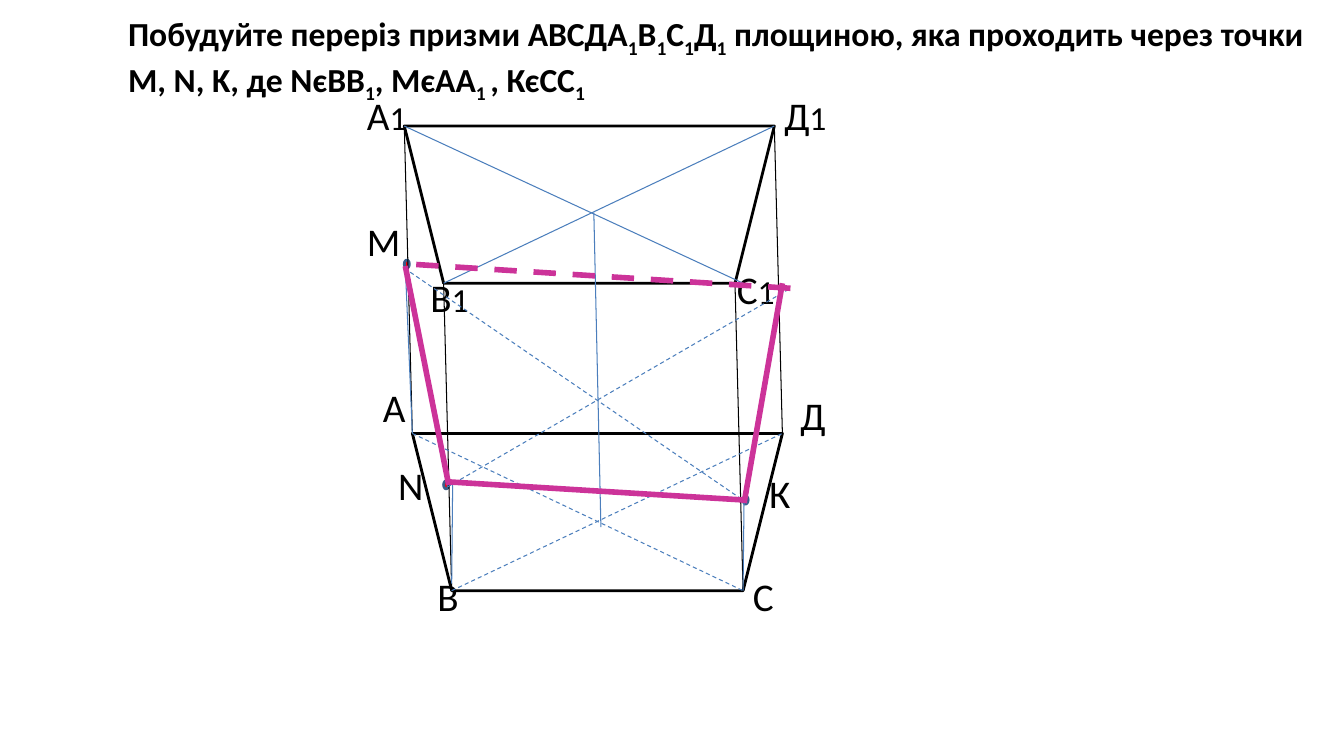
"""Slide with a prism and its section through three points."""
import pptx
import pptx.dml.color
import pptx.enum.dml
import pptx.enum.shapes
import pptx.enum.text
import pptx.oxml
import pptx.oxml.ns
import pptx.util

EMU_PER_PX = 9144
BLACK, BLUE, MAGENTA = "000000", "4B7EBC", "CC3399"

TITLE = ("Побудуйте переріз призми АВСДА|1|В|1|С|1|Д|1| площиною, яка проходить "
         "через точки M, N, K, де NєВВ|1|, МєАА|1 |, КєСС|1")

LABELS = [
    ("А", 370, 375), ("В", 424, 563), ("С", 737, 563), ("Д", 784, 383),
    ("А|1", 354, 86), ("В|1", 417, 266), ("С|1", 721, 258), ("Д|1", 768, 86),
    ("М", 354, 211), ("N", 385, 453), ("К", 753, 461),
]
SECTION_POINTS = [(401, 258), (440, 477), (737, 492)]
BASES = [(401, 125), (409, 430)]
TOP_CORNERS = [(768, 125), (729, 281), (440, 281), (401, 125)]
EDGE_SHIFT = (8, 305)
HELPER_LINES = [
    ((449, 477), (448, 579)), ((402, 264), (409, 430)), ((738, 493), (737, 586)),
    ((401, 125), (737, 281)), ((440, 281), (768, 125)), ((596, 523), (589, 211)),
]
HIDDEN_HELPER_LINES = [
    ((409, 430), (737, 586)), ((448, 586), (776, 430)),
    ((401, 266), (741, 499)), ((444, 483), (784, 286)),
]
HIDDEN_SECTION_SIDE = ((784, 286), (406, 262))
SECTION_SIDES = [
    ((402, 264), (445, 481)), ((444, 478), (737, 496)), ((738, 499), (776, 281)),
]


def px(*lengths):
    """Turn pixel lengths into a list of EMU lengths."""
    return [pptx.util.Emu(length * EMU_PER_PX) for length in lengths]


def color(hex_string):
    """Return the colour for a hex string."""
    return pptx.dml.color.RGBColor.from_string(hex_string)


def write_text(frame, text, size=28, index_size=24, bold=False, baseline=0):
    """Write text whose index parts are set off by bars."""
    frame.word_wrap = True
    frame.vertical_anchor = pptx.enum.text.MSO_ANCHOR.TOP
    para = frame.paragraphs[0]
    para.alignment = pptx.enum.text.PP_ALIGN.LEFT
    para.line_spacing = 1.0
    for number, part in enumerate(text.split("|")):
        is_index = number % 2 == 1
        span = para.add_run()
        span.text = part
        span.font.name = "Calibri"
        span.font.size = pptx.util.Pt(index_size if is_index else size)
        span.font.bold = bold
        span.font.color.rgb = color(BLACK)
        if is_index and baseline:
            span._r.get_or_add_rPr().set("baseline", str(baseline * 1000))


def add_title(page):
    """Place the task statement in the title placeholder."""
    title = page.shapes.title
    title.left, title.top, title.width, title.height = px(117, 8, 1225, 91)
    title.text_frame.auto_size = pptx.enum.text.MSO_AUTO_SIZE.NONE
    write_text(title.text_frame, TITLE, size=24, bold=True, baseline=-25)


def add_label(page, text, left, top):
    """Name a vertex or a section point."""
    width = 62 if "|" in text else 47
    box = page.shapes.add_textbox(*px(left, top, width, 57))
    write_text(box.text_frame, text)


def add_outline(page, kind, place, line, fill=None):
    """Add a preset shape with a 2 pt outline."""
    shape = page.shapes.add_shape(kind, *px(*place))
    shape.shadow.inherit = False
    if fill:
        shape.fill.solid()
        shape.fill.fore_color.rgb = color(fill)
    else:
        shape.fill.background()
    shape.line.color.rgb = color(line)
    shape.line.width = pptx.util.Pt(2)
    return shape


def add_line(page, start, end, line, width=0.75, dashed=False):
    """Draw a straight segment between two points."""
    segment = page.shapes.add_connector(
        pptx.enum.shapes.MSO_CONNECTOR.STRAIGHT, *px(*start, *end))
    segment.line.color.rgb = color(line)
    segment.line.width = pptx.util.Pt(width)
    if dashed:
        segment.line.dash_style = pptx.enum.dml.MSO_LINE.DASH
    segment._element.spPr.append(
        pptx.oxml.parse_xml(f"<a:effectLst {pptx.oxml.ns.nsdecls('a')}/>"))


def main():
    """Build and save the slide."""
    deck = pptx.Presentation()
    deck.slide_width, deck.slide_height = px(1333, 750)
    page = deck.slides.add_slide(deck.slide_layouts[5])
    shapes = pptx.enum.shapes.MSO_SHAPE
    add_title(page)
    for label in LABELS:
        add_label(page, *label)
    for point in SECTION_POINTS:
        add_outline(page, shapes.OVAL, (*point, 5, 8), "3A5F8C", "FF0000")
    for corner in BASES:
        base = add_outline(page, shapes.TRAPEZOID, (*corner, 367, 156), BLACK)
        base.rotation = 180
    for x, y in TOP_CORNERS:
        add_line(page, (x, y), (x + EDGE_SHIFT[0], y + EDGE_SHIFT[1]), BLACK)
    for start, end in HELPER_LINES:
        add_line(page, start, end, BLUE)
    for start, end in HIDDEN_HELPER_LINES:
        add_line(page, start, end, BLUE, dashed=True)
    add_line(page, *HIDDEN_SECTION_SIDE, MAGENTA, width=4, dashed=True)
    for start, end in SECTION_SIDES:
        add_line(page, start, end, MAGENTA, width=4)
    deck.save("out.pptx")


if __name__ == "__main__":
    main()
